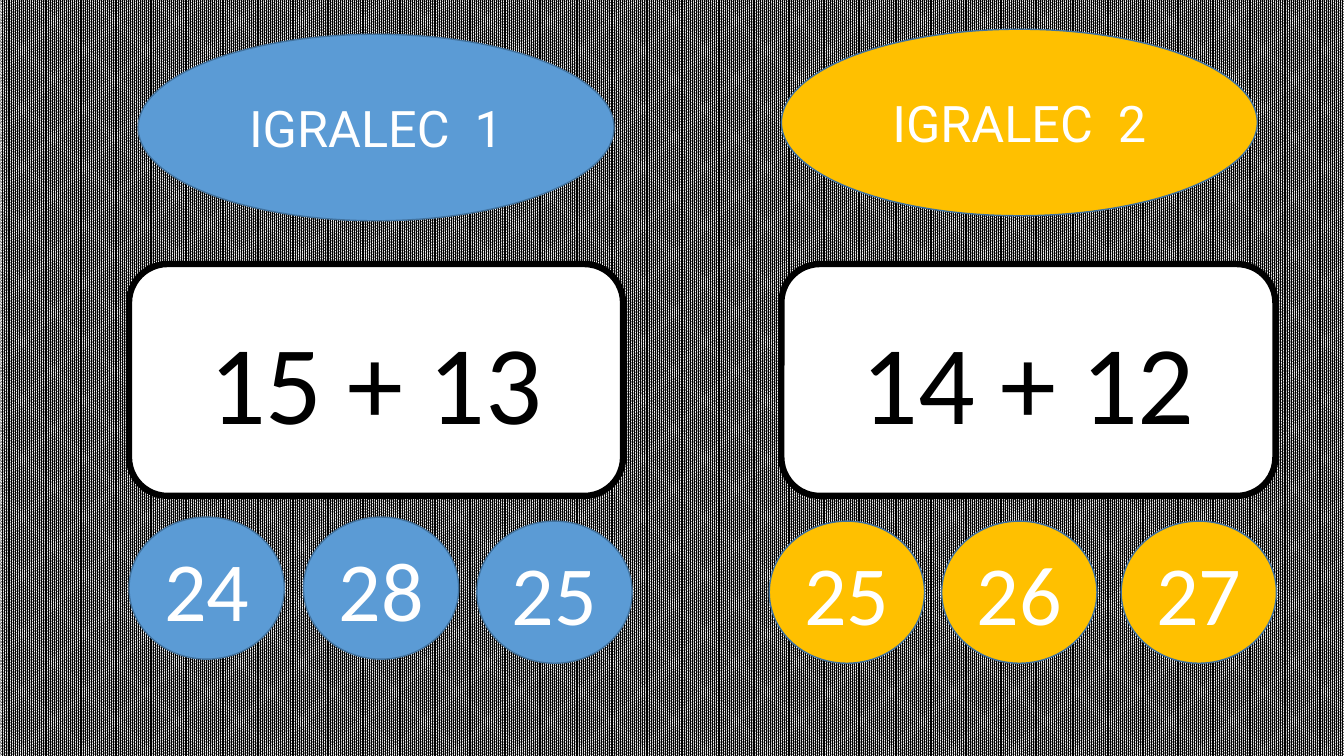
from pptx import Presentation
from pptx.dml.color import RGBColor
from pptx.enum.dml import MSO_PATTERN
from pptx.enum.shapes import MSO_SHAPE
from pptx.enum.text import MSO_ANCHOR, PP_ALIGN
from pptx.util import Inches, Pt

ELLIPSE = MSO_SHAPE.OVAL
CARD = MSO_SHAPE.ROUNDED_RECTANGLE
STRIPES = MSO_PATTERN.PERCENT_90
MIDDLE = MSO_ANCHOR.MIDDLE
CENTER = PP_ALIGN.CENTER

BLACK = RGBColor(0x00, 0x00, 0x00)
WHITE = RGBColor(0xFF, 0xFF, 0xFF)
BLUE = RGBColor(0x5B, 0x9B, 0xD5)
YELLOW = RGBColor(0xFF, 0xC0, 0x00)
OUTLINE = RGBColor(0x43, 0x73, 0x9E)

prs = Presentation()
prs.slide_width = Inches(13.33)
prs.slide_height = Inches(7.5)
slide = prs.slides.add_slide(prs.slide_layouts[6])

backdrop = slide.background.fill
backdrop.patterned()
backdrop.pattern = STRIPES
backdrop.fore_color.rgb = BLACK
backdrop.back_color.rgb = WHITE


def add_label(kind, box, text, font, size, ink, fill, edge=OUTLINE, weight=1):
    shape = slide.shapes.add_shape(kind, *(Inches(v) for v in box))
    shape.shadow.inherit = False
    shape.fill.solid()
    shape.fill.fore_color.rgb = fill
    shape.line.color.rgb = edge
    shape.line.width = Pt(weight)
    frame = shape.text_frame
    frame.word_wrap = True
    frame.vertical_anchor = MIDDLE
    paragraph = frame.paragraphs[0]
    paragraph.text = text
    paragraph.alignment = CENTER
    paragraph.font.name = font
    paragraph.font.size = Pt(size)
    paragraph.font.color.rgb = ink


players = [
    ("IGRALEC  1", 1.37, 0.34, BLUE, "15 + 13", 1.28,
     [("24", 1.28, 5.13), ("28", 3.01, 5.13), ("25", 4.73, 5.17)]),
    ("IGRALEC  2", 7.75, 0.29, YELLOW, "14 + 12", 7.75,
     [("25", 7.63, 5.17), ("26", 9.34, 5.17), ("27", 11.12, 5.17)]),
]

for player, player_left, player_top, color, problem, problem_left, answers in players:
    add_label(CARD, (problem_left, 2.62, 4.9, 2.3), problem,
              "Calibri", 80, BLACK, WHITE, BLACK, 4.5)
    add_label(ELLIPSE, (player_left, player_top, 4.72, 1.85), player,
              "Roboto", 36, WHITE, color)
    for answer, left, top in answers:
        add_label(ELLIPSE, (left, top, 1.54, 1.41), answer,
                  "Calibri", 60, WHITE, color)

prs.save("out.pptx")
